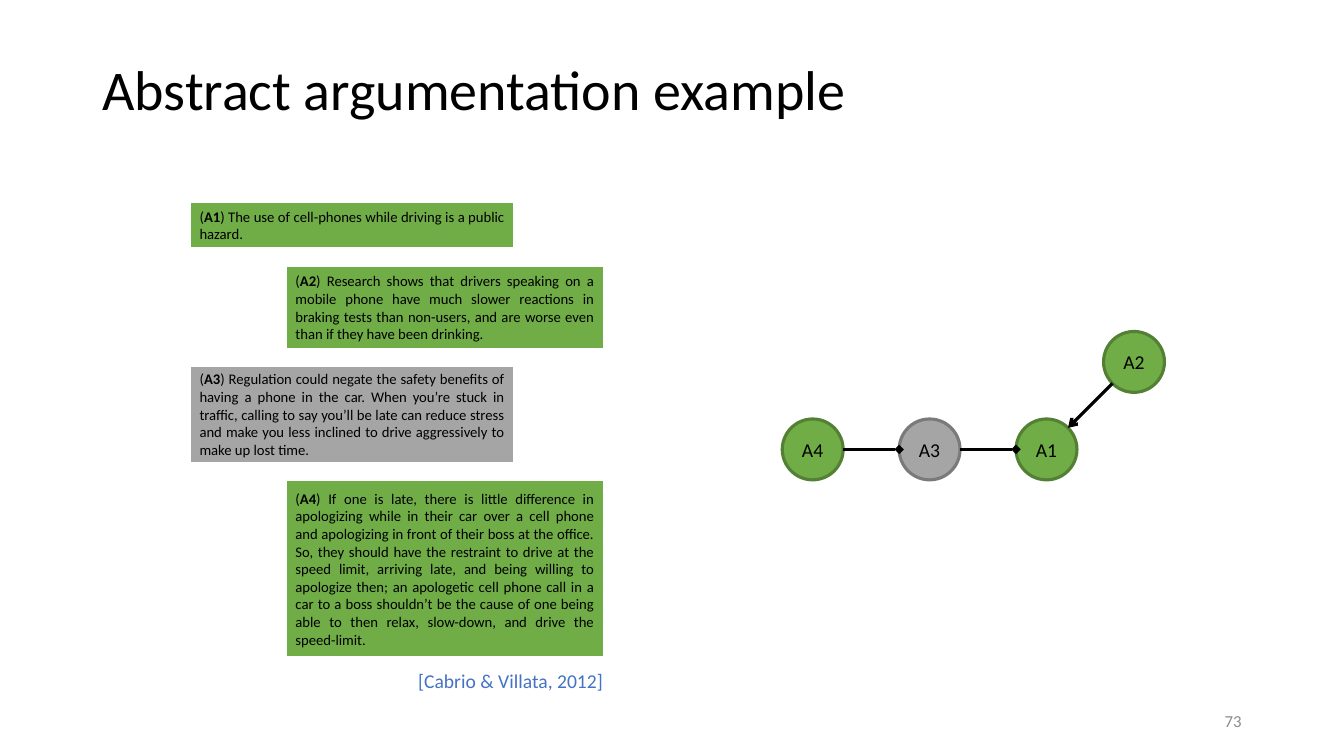
from lxml.etree import SubElement
from pptx import Presentation
from pptx.dml.color import RGBColor
from pptx.enum.shapes import MSO_CONNECTOR, MSO_SHAPE
from pptx.enum.text import MSO_ANCHOR, PP_ALIGN
from pptx.oxml.ns import qn
from pptx.util import Pt

HUES = {"black": "000000", "white": "FFFFFF", "green": "70AD47", "moss": "538035",
        "gray": "A5A5A5", "slate": "7A7A7A", "blue": "4472C4", "dim": "8C8C8C"}
EDGES = {"green": "moss", "gray": "slate"}


def hue(name):
    return RGBColor.from_string(HUES[name])


class Board:
    font = "Calibri"

    def __init__(self, deck):
        self.slide = deck.slides.add_slide(deck.slide_layouts[5])
        self.shapes = self.slide.shapes

    def place(self, shape, box):
        for key, size in zip(("left", "top", "width", "height"), box):
            setattr(shape, key, Pt(size))

    def letter(self, shape, runs, size, color="black", align=PP_ALIGN.LEFT, lead=None, **frame):
        look = {"word_wrap": True, "vertical_anchor": MSO_ANCHOR.MIDDLE, **frame}
        for key, value in look.items():
            setattr(shape.text_frame, key, value)
        para = shape.text_frame.paragraphs[0]
        para.alignment, para.line_spacing = align, lead
        for text, bold in runs:
            run = para.add_run()
            run.text = text
            style = {"name": self.font, "size": Pt(size), "bold": bold}
            for key, value in style.items():
                setattr(run.font, key, value)
            run.font.color.rgb = hue(color)

    def title(self, text, box):
        shape = self.shapes.title
        self.place(shape, box)
        self.letter(shape, [(text, False)], 40, lead=0.9)

    def label(self, text, box, size, color, align, **frame):
        shape = self.shapes.add_textbox(*map(Pt, box))
        self.letter(shape, [(text, False)], size, color, align, **frame)

    def block(self, kind, box, fill, edge, width):
        shape = self.shapes.add_shape(kind, *map(Pt, box))
        shape.shadow.inherit = False
        shape.fill.solid()
        shape.fill.fore_color.rgb = hue(fill)
        shape.line.color.rgb = hue(edge)
        shape.line.width = Pt(width)
        return shape

    def claim(self, name, text, box, fill):
        shape = self.block(MSO_SHAPE.RECTANGLE, box, fill, "white", 1.5)
        runs = [("(", False), (name, True), (") " + text, False)]
        self.letter(shape, runs, 10.5, align=PP_ALIGN.JUSTIFY)

    def node(self, name, mid, size, fill):
        x, y = mid
        box = (x - size / 2, y - size / 2, size, size)
        shape = self.block(MSO_SHAPE.OVAL, box, fill, EDGES[fill], 2.25)
        pads = dict.fromkeys(("margin_left", "margin_right", "margin_top", "margin_bottom"), 0)
        self.letter(shape, [(name, False)], 14, align=PP_ALIGN.CENTER, **pads)

    def link(self, start, end, tip):
        line = self.shapes.add_connector(MSO_CONNECTOR.STRAIGHT, *map(Pt, start + end))
        line.line.color.rgb = hue("black")
        line.line.width = Pt(2.25)
        props = line.element.spPr
        SubElement(props.find(qn("a:ln")), qn("a:tailEnd"), type=tip)
        SubElement(props, qn("a:effectLst"))


CLAIMS = [
    ("A1", 144, 33.5, "green", "The use of cell-phones while driving is a public hazard."),
    ("A2", 190, 59, "green", "Research shows that drivers speaking on a mobile phone have much slower "
     "reactions in braking tests than non-users, and are worse even than if they have been drinking."),
    ("A3", 261.5, 69, "gray", "Regulation could negate the safety benefits of having a phone in the car. "
     "When you’re stuck in traffic, calling to say you’ll be late can reduce stress and make you less "
     "inclined to drive aggressively to make up lost time."),
    ("A4", 343, 126.5, "green", "If one is late, there is little difference in apologizing while in their "
     "car over a cell phone and apologizing in front of their boss at the office. So, they should have "
     "the restraint to drive at the speed limit, arriving late, and being willing to apologize then; an "
     "apologetic cell phone call in a car to a boss shouldn’t be the cause of one being able to then "
     "relax, slow-down, and drive the speed-limit."),
]
SPOTS = {"A4": (580.5, 321), "A3": (664, 321), "A1": (747.5, 321), "A2": (810, 258.5)}
LINKS = [("A4", "A3", "diamond"), ("A3", "A1", "diamond"), ("A2", "A1", "arrow")]
SIZE = 43.5


def rim(here, there):
    dx, dy = there[0] - here[0], there[1] - here[1]
    part = SIZE / 2 / (dx * dx + dy * dy) ** 0.5
    return here[0] + dx * part, here[1] + dy * part


def main():
    deck = Presentation()
    deck.slide_width, deck.slide_height = Pt(960), Pt(540)
    board = Board(deck)
    board.title("Abstract argumentation example", (66, 28.75, 828, 75))
    for rank, (name, top, high, fill, text) in enumerate(CLAIMS):
        left, wide = ((135.5, 232), (204, 227.5))[rank % 2]
        board.claim(name, text, (left, top, wide, high), fill)
        board.node(name, SPOTS[name], SIZE, fill)
    for tail, head, tip in LINKS:
        a, b = SPOTS[tail], SPOTS[head]
        board.link(rim(a, b), rim(b, a), tip)
    board.label("[Cabrio & Villata, 2012]", (298, 478, 133.5, 17), 14, "blue", PP_ALIGN.CENTER,
                word_wrap=False, margin_left=0, margin_right=0, margin_top=0, margin_bottom=0)
    board.label("73", (678, 500.5, 216, 28.75), 12, "dim", PP_ALIGN.RIGHT)
    deck.save("out.pptx")


if __name__ == "__main__":
    main()
